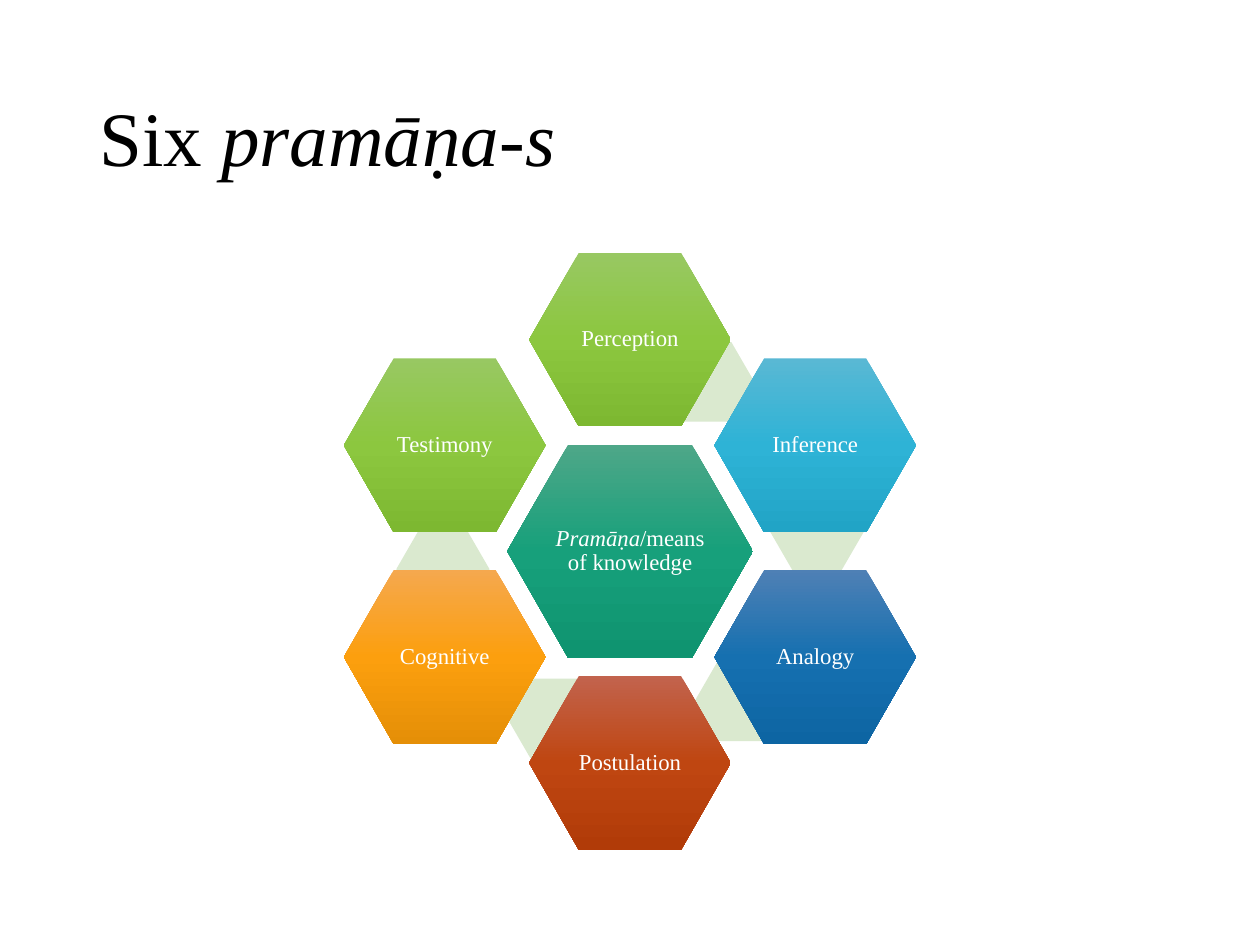
from copy import deepcopy
from pptx import Presentation
from pptx.util import Inches, Pt
from pptx.dml.color import RGBColor
from pptx.enum import shapes, text

theme = {
    "font": "Times New Roman", "title": 44, "label": 13,
    "ink": "000000", "pale": "FFFFFF", "link": "DAE9CF",
    "teal": ("4EA788", "17A07B", "0F9470"),
    "green": ("98C862", "8CC73F", "7DB831"),
    "cyan": ("59B8D4", "2EB3D6", "21A4C6"),
    "blue": ("4E80B5", "1670B0", "0D65A3"),
    "red": ("C2634D", "BF4611", "B13B08"),
    "gold": ("F5A84E", "FC9F0E", "E58F07"),
}
midx, midy = 5, 4.375
col, row = 1.47, 0.84

deck = Presentation()
deck.slide_width, deck.slide_height = Inches(10), Inches(7.5)
slide = deck.slides.add_slide(deck.slide_layouts[6])


def write(frame, runs, size, ink, align):
    frame.word_wrap = True
    frame.vertical_anchor = text.MSO_ANCHOR.MIDDLE
    para = frame.paragraphs[0]
    para.alignment = align
    para.line_spacing = 0.9
    para.font.name = theme["font"]
    para.font.size = Pt(size)
    para.font.color.rgb = RGBColor.from_string(ink)
    for words, slant in runs:
        run = para.add_run()
        run.text = words
        if slant:
            run.font.italic = True


def hexagon(x, y, wide, high, adj, tones, runs=()):
    cell = slide.shapes.add_shape(
        shapes.MSO_SHAPE.HEXAGON,
        Inches(midx + x * col - wide / 2), Inches(midy + y * row - high / 2),
        Inches(wide), Inches(high))
    cell.adjustments[0] = adj
    cell.shadow.inherit = False
    cell.line.fill.background()
    if len(tones) == 1:
        cell.fill.solid()
        cell.fill.fore_color.rgb = RGBColor.from_string(tones[0])
        return
    cell.fill.gradient()
    cell.fill.gradient_angle = 270
    stops = cell._element.xpath(".//a:gsLst")[0]
    stops.append(deepcopy(stops[-1]))
    for stop, tone, place in zip(cell.fill.gradient_stops, tones, (0, 0.5, 1)):
        stop.color.rgb = RGBColor.from_string(tone)
        stop.position = place
    frame = cell.text_frame
    frame.margin_left = frame.margin_right = Inches(0.02)
    frame.margin_top = frame.margin_bottom = Inches(0.02)
    write(frame, runs, theme["label"], theme["pale"], text.PP_ALIGN.CENTER)


title = slide.shapes.add_textbox(Inches(0.69), Inches(0.4), Inches(8.62), Inches(1.45))
write(title.text_frame, [("Six ", False), ("pramāṇa-s", True)],
      theme["title"], theme["ink"], text.PP_ALIGN.LEFT)

hexagon(0, 0, 1.95, 1.69, 0.286, theme["teal"],
        [("Pramāṇa", True), ("/means of knowledge", False)])

ring = [
    ("Perception", "green", (0, -2), (0.42, -1.6)),
    ("Inference", "cyan", (1, -1), (1.01, -0.18)),
    ("Analogy", "blue", (1, 1), (0.6, 1.42)),
    ("Postulation", "red", (0, 2), (-0.41, 1.58)),
    ("Cognitive", "gold", (-1, 1), (-1.01, 0.17)),
    ("Testimony", "green", (-1, -1), None),
]
for name, tone, spot, link in ring:
    if link:
        hexagon(*link, 0.74, 0.63, 0.289, [theme["link"]])
    hexagon(*spot, 1.6, 1.38, 0.286, theme[tone], [(name, False)])

deck.save("out.pptx")
